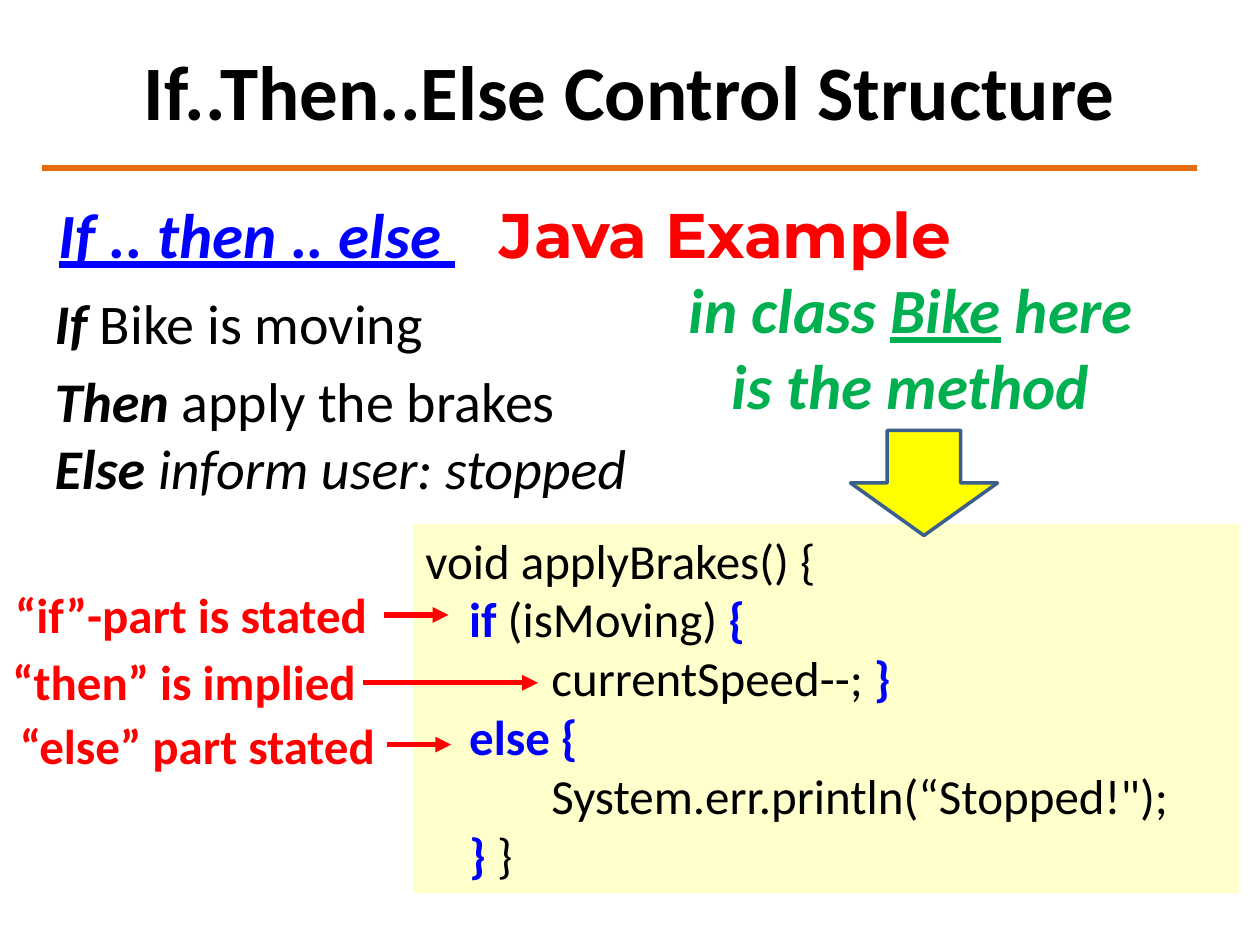
"""Build the slide that explains the if..then..else control structure."""
from dataclasses import dataclass
from typing import Any

from lxml.etree import SubElement
from pptx import Presentation
from pptx.dml.color import RGBColor
from pptx.enum.shapes import MSO_CONNECTOR, MSO_SHAPE
from pptx.enum.text import MSO_ANCHOR, MSO_AUTO_SIZE, PP_ALIGN
from pptx.oxml.ns import qn
from pptx.util import Pt


@dataclass(frozen=True)
class Theme:
    """Colours, fonts and type sizes of the slide."""
    ink: str = "000000"
    keyword: str = "0000FF"
    alert: str = "FF0000"
    example: str = "00B050"
    rule: str = "E46C0A"
    panel: str = "FFFFCC"
    pointer: str = "FFFF00"
    pointer_edge: str = "3A5F8C"
    font: str = "Calibri"
    accent_font: str = "Montserrat"
    title: int = 44
    heading: int = 36
    body: int = 32
    code: int = 28


def write(paragraph, text, *, size, color, font, bold=False, italic=False, underline=False):
    """Add a formatted run to a paragraph."""
    run = paragraph.add_run()
    run.text = text
    run.font.size = Pt(size)
    run.font.name = font
    run.font.color.rgb = RGBColor.from_string(color)
    run.font.bold = bold
    run.font.italic = italic
    run.font.underline = underline


@dataclass
class SlideBuilder:
    """Hold the style and the current slide, and add each kind of element."""
    theme: Theme
    slide: Any

    def fill_text(self, shape, lines, size, align=PP_ALIGN.LEFT, anchor=MSO_ANCHOR.TOP):
        """Write lines given as (layout, runs) into a shape."""
        frame = shape.text_frame
        frame.word_wrap = True
        frame.auto_size = MSO_AUTO_SIZE.NONE
        frame.vertical_anchor = anchor
        for index, (layout, runs) in enumerate(lines):
            paragraph = frame.add_paragraph() if index else frame.paragraphs[0]
            paragraph.alignment = align
            paragraph.space_before = Pt(0)
            paragraph.space_after = Pt(layout.get("after", 0))
            properties = paragraph._p.get_or_add_pPr()
            properties.set("marL", str(Pt(layout.get("indent", 0))))
            properties.set("indent", "0")
            SubElement(properties, qn("a:buNone"))
            if "tab" in layout:
                stops = SubElement(properties, qn("a:tabLst"))
                SubElement(stops, qn("a:tab"), pos=str(Pt(layout["tab"])), algn="l")
            for text, style in runs:
                base = {"size": size, "color": self.theme.ink, "font": self.theme.font}
                write(paragraph, text, **{**base, **style})

    def placeholder(self, index, box, lines, size, **options):
        """Move and fill one of the layout's placeholders."""
        holder = self.slide.placeholders[index]
        holder.left, holder.top, holder.width, holder.height = map(Pt, box)
        self.fill_text(holder, lines, size, **options)

    def text(self, box, lines, size, parent=None):
        """Add a text box to the slide or to a group."""
        textbox = (parent or self.slide).shapes.add_textbox(*map(Pt, box))
        self.fill_text(textbox, lines, size)

    def shape(self, kind, box, fill, edge=None):
        """Add a filled preset shape."""
        shape = self.slide.shapes.add_shape(kind, *map(Pt, box))
        shape.shadow.inherit = False
        shape.fill.solid()
        shape.fill.fore_color.rgb = RGBColor.from_string(fill)
        if edge:
            shape.line.color.rgb = RGBColor.from_string(edge)
            shape.line.width = Pt(2)
        else:
            shape.line.fill.background()
        return shape

    def line(self, start, end, y, color, arrow=False, parent=None):
        """Add a horizontal line, with an arrowhead if wanted."""
        connector = (parent or self.slide).shapes.add_connector(
            MSO_CONNECTOR.STRAIGHT, Pt(start), Pt(y), Pt(end), Pt(y))
        connector.line.color.rgb = RGBColor.from_string(color)
        connector.line.width = Pt(3)
        if arrow:
            SubElement(connector.line._get_or_add_ln(), qn("a:tailEnd"), type="triangle")
        SubElement(connector._element.spPr, qn("a:effectLst"))

    def callout(self, label, left, top, start, end, y):
        """Group a label with the arrow that leads to its line of code."""
        group = self.slide.shapes.add_group_shape()
        style = {"color": self.theme.alert, "bold": True}
        self.text((left, top, 275, 41), [({}, [(label, style)])], self.theme.code, group)
        self.line(start, end, y, self.theme.alert, arrow=True, parent=group)


def main():
    """Build and save the slide."""
    deck = Presentation()
    deck.slide_width, deck.slide_height = Pt(720), Pt(540)
    theme = Theme()
    builder = SlideBuilder(theme, deck.slides.add_slide(deck.slide_layouts[1]))

    strong = {"bold": True, "italic": True}
    heading = {**strong, "color": theme.keyword, "underline": True}
    java = {"bold": True, "color": theme.alert, "font": theme.accent_font}
    example = {**strong, "color": theme.example}
    keyword = {"bold": True, "color": theme.keyword}

    builder.placeholder(
        0, (36, 6, 648, 90),
        [({}, [("If..Then..Else Control Structure", {"bold": True})])],
        theme.title, align=PP_ALIGN.CENTER, anchor=MSO_ANCHOR.MIDDLE)
    builder.line(24, 684, 96, theme.rule)
    builder.text((26.6, 108, 660, 138), [
        ({"tab": 360}, [("If .. then .. else ", heading), ("\tJava Example", java)]),
        ({"indent": 360}, [("in class ", example), ("Bike", {**example, "underline": True}),
                           (" here", example)]),
        ({"indent": 384.5}, [("is the method", example)]),
    ], theme.heading)
    builder.placeholder(1, (24, 161.5, 348, 130), [
        ({"after": 6}, [("If", strong), (" Bike is moving", {})]),
        ({}, [("Then", strong), (" apply the brakes", {})]),
        ({}, [("Else ", strong), ("inform user: stopped", {"italic": True})]),
    ], theme.body)

    panel = builder.shape(MSO_SHAPE.RECTANGLE, (236, 299.4, 472, 211), theme.panel)
    branch, statement = {"indent": 25}, {"indent": 72}
    builder.fill_text(panel, [
        ({}, [("void applyBrakes() {", {})]),
        (branch, [("if ", keyword), ("(isMoving) ", {}), ("{", keyword)]),
        (statement, [("currentSpeed--; ", {}), ("}", keyword)]),
        (branch, [("else {", keyword)]),
        (statement, [("System.err.println(“Stopped!\");", {})]),
        (branch, [("} ", keyword), ("}", {})]),
    ], theme.code)

    for callout in (
        ("“if”-part is stated", 1.5, 330.5, 219.6, 256.3, 351.4),
        ("“then” is implied", 0, 368.6, 207.4, 307.4, 390.2),
        ("“else” part stated", 4.3, 405.4, 221, 257.8, 425.5),
    ):
        builder.callout(*callout)
    builder.shape(MSO_SHAPE.DOWN_ARROW, (486, 246, 84, 60), theme.pointer, theme.pointer_edge)
    deck.save("out.pptx")


if __name__ == "__main__":
    main()
